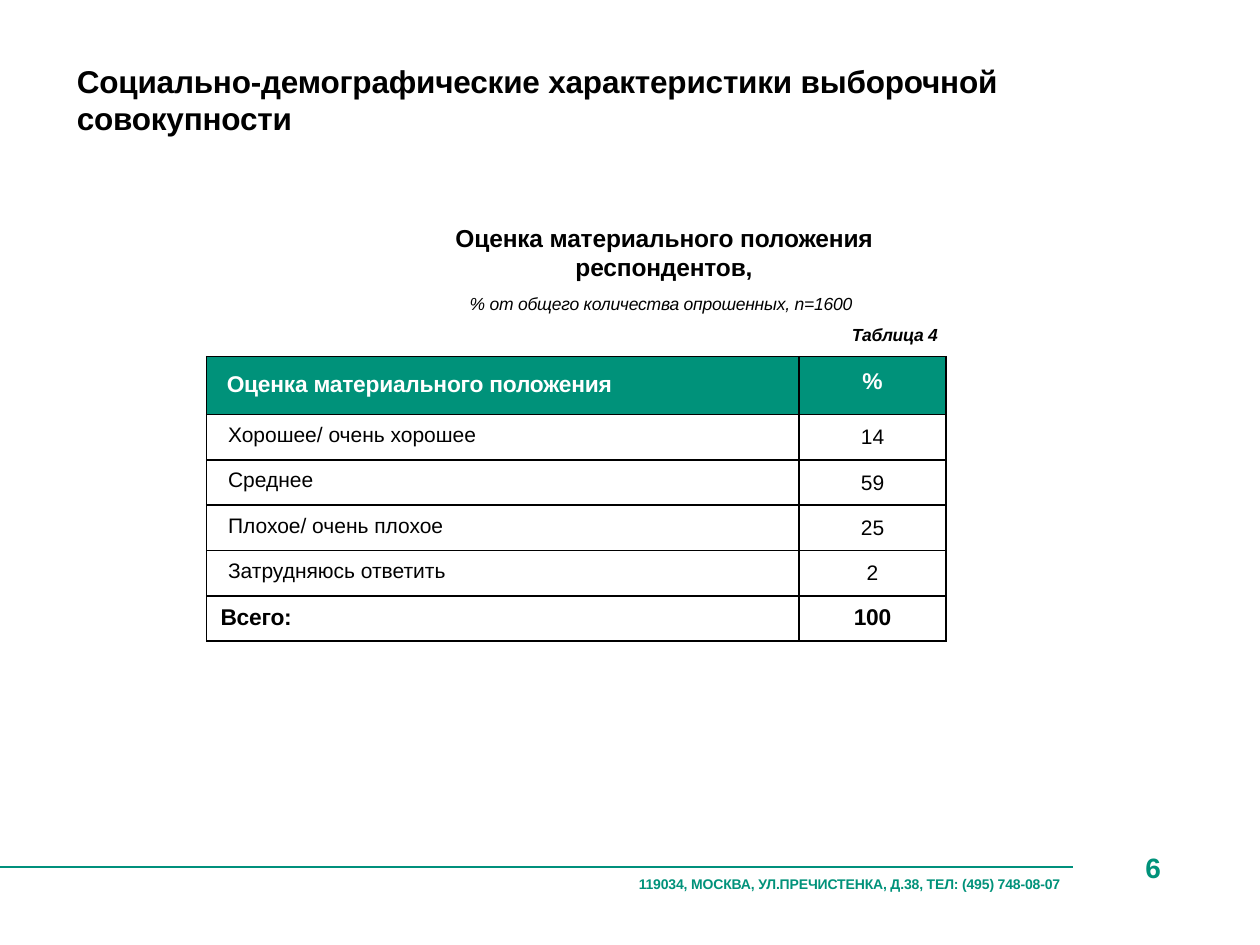
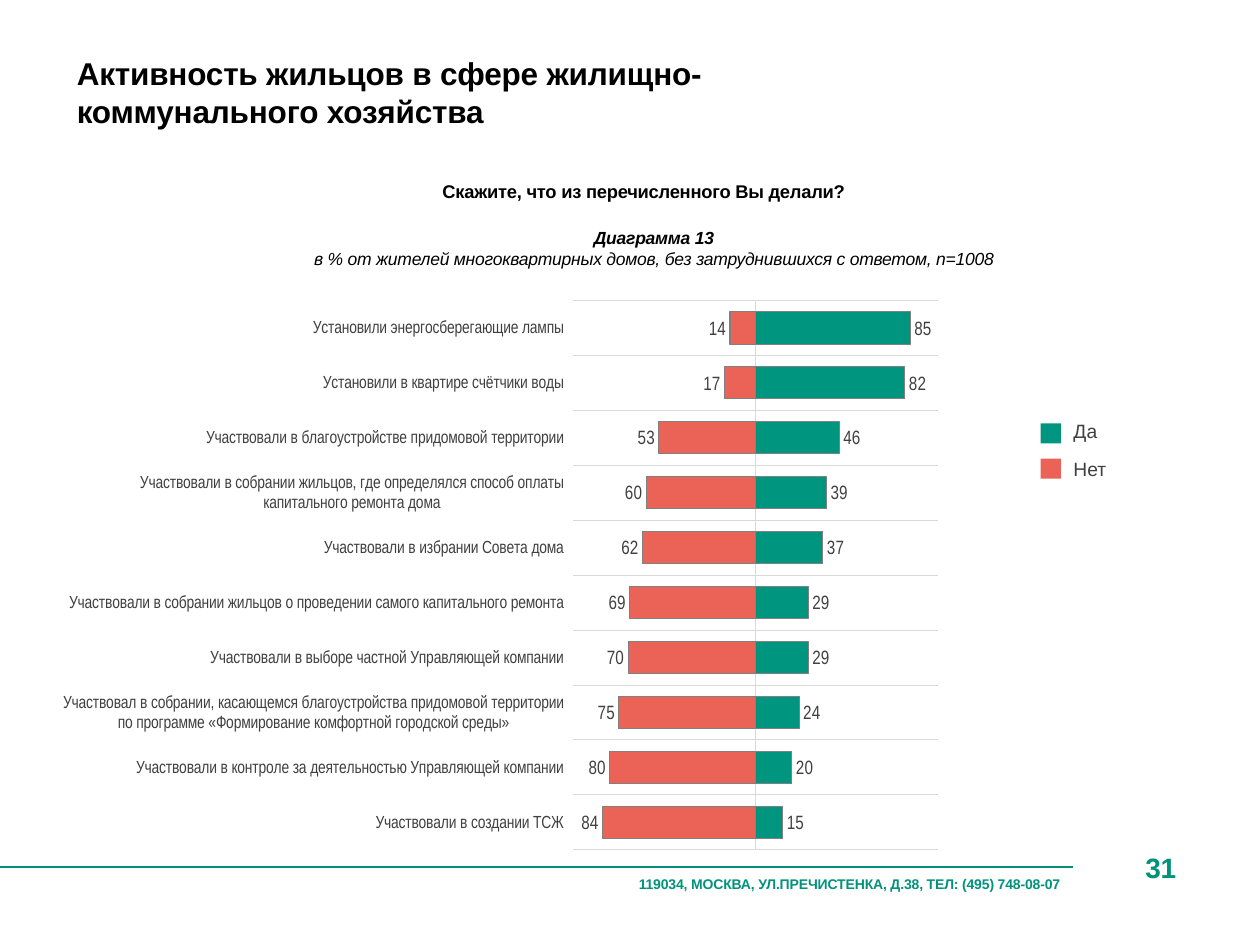
from lxml.etree import SubElement
from pptx import Presentation
from pptx.chart.data import CategoryChartData
from pptx.dml.color import RGBColor
from pptx.enum.chart import XL_CHART_TYPE as ChartType, XL_LABEL_POSITION as LabelPos
from pptx.enum.chart import XL_TICK_LABEL_POSITION as TickLabels, XL_TICK_MARK as TickMark
from pptx.enum.shapes import MSO_CONNECTOR as Connector, MSO_SHAPE as Shape
from pptx.enum.text import PP_ALIGN as Align
from pptx.oxml import parse_xml
from pptx.oxml.ns import nsdecls, qn
from pptx.util import Inches, Pt

color = RGBColor.from_string
BLACK, WHITE, GRAY, PALE, EDGE = "000000", "FFFFFF", "404040", "D9D9D9", "808080"
BRAND, RULE, YES, NO = "00927A", "00907C", "00957F", "EB6357"
FONT = "Arial"
ADDRESS = "119034, МОСКВА, УЛ.ПРЕЧИСТЕНКА, Д.38, ТЕЛ: (495) 748-08-07"

deck = Presentation()
deck.slide_width, deck.slide_height = Inches(10), Inches(7.5)
COLUMN, ROW = deck.slide_width / 100, deck.slide_height / 75


def grid(left, top, width, height):
    return [round(n * unit) for n, unit in zip((left, top, width, height), (COLUMN, ROW) * 2)]


def write(frame, text, size=10, ink=BLACK, bold=False, italic=False, align=Align.LEFT,
          indent=0, before=0, inset=0, spacing=-10):
    frame.word_wrap = True
    if not frame.text:
        frame.margin_left = frame.margin_right = frame.margin_bottom = 0
        frame.margin_top = Inches(inset)
        paragraph = frame.paragraphs[0]
    else:
        paragraph = frame.add_paragraph()
        paragraph.space_before = Pt(before)
    paragraph.alignment = align
    paragraph._p.get_or_add_pPr().set("marL", str(Inches(indent)))
    run = paragraph.add_run()
    run.text = text
    run.font.name, run.font.size = FONT, Pt(size)
    run.font.bold, run.font.italic = bold, italic
    run.font.color.rgb = color(ink)
    run._r.get_or_add_rPr().set("spc", str(spacing))


pages = [
    ("6", ["Социально-демографические характеристики выборочной", "совокупности"], (6, 4.8, 80, 6.3)),
    ("31", ["Активность жильцов в сфере жилищно-коммунального хозяйства"], (6, 4.2, 60.1, 6.2)),
]
slides = []
for number, title, title_area in pages:
    slide = deck.slides.add_slide(deck.slide_layouts[6])
    slides.append(slide)
    left, top, width, height = grid(0, 68.8, 85.2, 0)
    rule = slide.shapes.add_connector(Connector.STRAIGHT, left, top, left + width, top)
    rule.line.color.rgb, rule.line.width = color(RULE), Pt(1.2)
    SubElement(rule._element.spPr, qn("a:effectLst"))
    heading = slide.shapes.add_textbox(*grid(*title_area)).text_frame
    for line in title:
        write(heading, line, size=18, bold=True, indent=0.01, inset=0.01)
    page_number = slide.shapes.add_textbox(*grid(90.5, 67.5, 3.3, 2.8)).text_frame
    write(page_number, number, size=16, ink=BRAND, bold=True, indent=0.04)
    address = slide.shapes.add_textbox(*grid(50.6, 69.5, 34.8, 1.5)).text_frame
    write(address, ADDRESS, size=8, ink=BRAND, bold=True, indent=0.01)

sample, activity = slides

caption = sample.shapes.add_textbox(*grid(30.2, 16.3, 44.5, 11.1)).text_frame
write(caption, "Оценка материального положения респондентов,", size=14, bold=True,
      align=Align.CENTER, indent=0.05, inset=0.14)
write(caption, "% от общего количества опрошенных, n=1600", italic=True, align=Align.CENTER, before=6.2)
write(caption, "Таблица 4", bold=True, italic=True, indent=3.74, before=5.6)

ratings = [
    ("Оценка материального положения", "%"),
    ("Хорошее/ очень хорошее", "14"),
    ("Среднее", "59"),
    ("Плохое/ очень плохое", "25"),
    ("Затрудняюсь ответить", "2"),
    ("Всего:", "100"),
]
header_look = dict(size=13, ink=WHITE, bold=True, indent=0.16, insets=(0.12, 0.1))
answer_look = dict(size=12, ink=BLACK, bold=False, indent=0.17, insets=(0.07, 0.09))
total_look = dict(size=13, ink=BLACK, bold=True, indent=0.11, insets=(0.07, 0.07))
looks = [header_look] + [answer_look] * 4 + [total_look]

table = sample.shapes.add_table(len(ratings), 2, *grid(16.4, 28.3, 58.7, 22.6)).table
table.columns[0].width, table.columns[1].width = Inches(4.7), Inches(1.17)
for r, (rating, look) in enumerate(zip(ratings, looks)):
    table.rows[r].height = Inches(0.36 if r else 0.46)
    for c, text in enumerate(rating):
        cell = table.cell(r, c)
        cell.margin_left = cell.margin_right = cell.margin_bottom = 0
        cell.margin_top = Inches(look["insets"][c])
        write(cell.text_frame, text, size=look["size"], ink=look["ink"], bold=look["bold"],
              align=Align.CENTER if c else Align.LEFT, indent=0 if c else look["indent"],
              spacing=0 if look is answer_look else -10)
        borders = cell._tc.get_or_add_tcPr()
        for side in ("lnL", "lnR", "lnT", "lnB"):
            borders.append(parse_xml(
                f'<a:{side} {nsdecls("a")} w="{Pt(1)}"><a:solidFill>'
                f'<a:srgbClr val="{BLACK}"/></a:solidFill></a:{side}>'))
        if r == 0:
            cell.fill.solid()
            cell.fill.fore_color.rgb = color(BRAND)
        else:
            cell.fill.background()

question = activity.shapes.add_textbox(*grid(7.1, 14.2, 88.4, 7.2)).text_frame
write(question, "Скажите, что из перечисленного Вы делали? ", size=10.5, bold=True,
      align=Align.CENTER, inset=0.01)
write(question, "Диаграмма 13", bold=True, italic=True, align=Align.CENTER, indent=0.12, before=14.3)
write(question, "в % от жителей многоквартирных домов, без затруднившихся с ответом, n=1008",
      italic=True, align=Align.CENTER, indent=0.12)

actions = [
    ("Установили энергосберегающие лампы", 85, 14),
    ("Установили в квартире счётчики воды", 82, 17),
    ("Участвовали в благоустройстве придомовой территории", 46, 53),
    ("Участвовали в собрании жильцов, где определялся способ оплаты капитального ремонта дома", 39, 60),
    ("Участвовали в избрании Совета дома", 37, 62),
    ("Участвовали в собрании жильцов о проведении самого капитального ремонта", 29, 69),
    ("Участвовали в выборе частной Управляющей компании", 29, 70),
    ("Участвовал в собрании, касающемся благоустройства придомовой территории "
     "по программе «Формирование комфортной городской среды»", 24, 75),
    ("Участвовали в контроле за деятельностью Управляющей компании", 20, 80),
    ("Участвовали в создании ТСЖ", 15, 84),
]
answers = CategoryChartData()
answers.categories = [action for action, yes, no in actions]
answers.add_series("Да", [yes for action, yes, no in actions])
answers.add_series("Нет", [-no for action, yes, no in actions])
chart = activity.shapes.add_chart(ChartType.BAR_CLUSTERED, *grid(5, 22.5, 71.7, 45), answers).chart
chart.has_legend = chart.has_title = False
chart.font.name, chart.font.size = "Calibri", Pt(10)

actions_axis = chart.category_axis
actions_axis.reverse_order = True
actions_axis.tick_label_position = TickLabels.LOW
actions_axis.major_tick_mark = actions_axis.minor_tick_mark = TickMark.NONE
actions_axis.has_major_gridlines = True
for line in (actions_axis.format.line, actions_axis.major_gridlines.format.line):
    line.color.rgb, line.width = color(PALE), Pt(0.75)
share_axis = chart.value_axis
share_axis.minimum_scale, share_axis.maximum_scale = -100, 100
share_axis.has_major_gridlines = share_axis.visible = False

bars = chart.plots[0]
bars.gap_width, bars.overlap, bars.vary_by_categories = 70, 100, False
label_fonts = [(actions_axis.tick_labels.font, 10)]
for answer, fill, number_format in zip(bars.series, (YES, NO), ("###0", "#;#")):
    answer.invert_if_negative = False
    answer.format.fill.solid()
    answer.format.fill.fore_color.rgb = color(fill)
    answer.format.line.color.rgb, answer.format.line.width = color(EDGE), Pt(0.75)
    labels = answer.data_labels
    labels.show_value, labels.position = True, LabelPos.OUTSIDE_END
    labels.number_format, labels.number_format_is_linked = number_format, False
    label_fonts.append((labels.font, 11))
for font, size in label_fonts:
    font.name, font.size, font.color.rgb = FONT, Pt(size), color(GRAY)

plot_area = chart._chartSpace.chart.plotArea
for old_layout in plot_area.findall(qn("c:layout")):
    plot_area.remove(old_layout)
plot_area.insert(0, parse_xml(
    f'<c:layout {nsdecls("c")}><c:manualLayout><c:layoutTarget val="inner"/>'
    '<c:xMode val="edge"/><c:yMode val="edge"/><c:x val="0.45"/><c:y val="0.03"/>'
    '<c:w val="0.51"/><c:h val="0.97"/></c:manualLayout></c:layout>'))

for step, (answer, fill) in enumerate((("Да", YES), ("Нет", NO))):
    key = activity.shapes.add_shape(Shape.RECTANGLE, *grid(82.6, 33.6 + 2.8 * step, 1.6, 1.6))
    key.shadow.inherit = False
    key.fill.solid()
    key.fill.fore_color.rgb = color(fill)
    key.line.fill.background()
    key_label = activity.shapes.add_textbox(*grid(85.2, 32.8 + 3 * step, 10.7, 2.9)).text_frame
    write(key_label, answer, size=11, ink=GRAY, inset=0.05, spacing=0)

deck.save("out.pptx")
